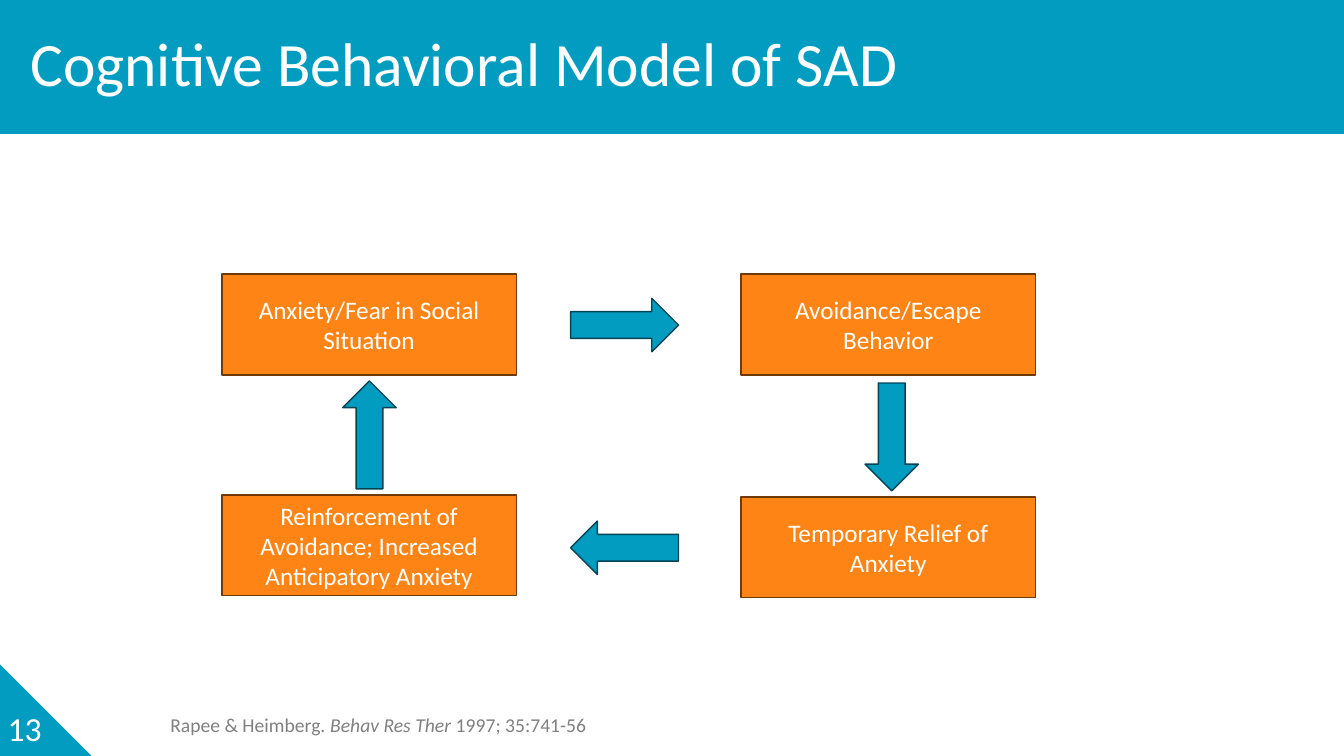
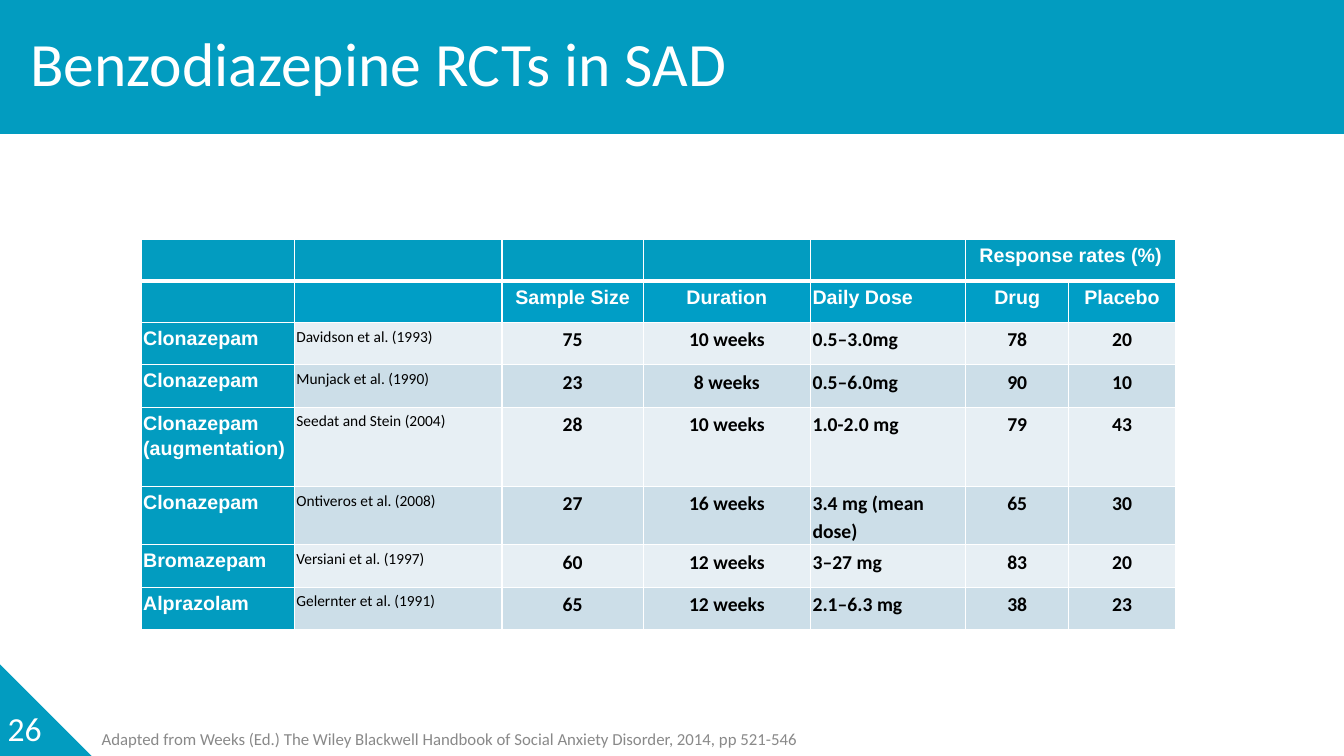
import pptx
import pptx.util
import pptx.dml.color
import pptx.enum.shapes
import pptx.enum.text
import pptx.oxml
import pptx.oxml.ns

Pt = pptx.util.Pt
SHAPE = pptx.enum.shapes.MSO_SHAPE
ANCHOR = pptx.enum.text.MSO_ANCHOR
ALIGN = pptx.enum.text.PP_ALIGN

PX = 9144  # 100 px to the inch
WIDE, HIGH = 1333, 750
BAND, CORNER = 133, 91
TEAL, HEAD, ORANGE, WHITE = "029CC0", "009EC6", "FE8415", "FFFFFF"
BROWN, NAVY, BLACK = "6F3A09", "014454", "000000"
STRIPES = ["E7EFF4", "CCDEE8"]

BOX = (292, 100)
STEPS = [
    ("Reinforcement of Avoidance; Increased Anticipatory Anxiety", 220, 491),
    ("Anxiety/Fear in Social Situation", 220, 272),
    ("Avoidance/Escape Behavior", 735, 272),
    ("Temporary Relief of Anxiety", 735, 493),
]
LONG, SHORT = 107, 53
ARROWS = [
    (SHAPE.RIGHT_ARROW, 566, 296, LONG, SHORT),
    (SHAPE.DOWN_ARROW, 858, 380, SHORT, LONG),
    (SHAPE.UP_ARROW, 340, 378, SHORT, LONG),
    (SHAPE.LEFT_ARROW, 566, 517, LONG, SHORT),
]
CITE = [("Rapee & Heimberg. ", False), ("Behav Res Ther ", True),
        ("1997; 35:741-56", False)]
SOURCE = [("Adapted from Weeks (Ed.) The Wiley Blackwell Handbook of Social "
           "Anxiety Disorder, 2014, pp 521-546", False)]

COLS = [152, 206, 140, 166, 154, 102, 106]
ROWS = [41, 41, 42, 42, 79, 42, 42, 42]
TRIALS = [
    ("", "", "", "", "", "Response rates (%)", ""),
    ("", "", "Sample Size", "Duration", "Daily Dose", "Drug", "Placebo"),
    ("Clonazepam", "Davidson et al. (1993)", "75", "10 weeks",
     "0.5–3.0mg", "78", "20"),
    ("Clonazepam", "Munjack et al. (1990)", "23", "8 weeks",
     "0.5–6.0mg", "90", "10"),
    ("Clonazepam (augmentation)", "Seedat and Stein (2004)", "28", "10 weeks",
     "1.0-2.0 mg", "79", "43"),
    ("Clonazepam", "Ontiveros et al. (2008)", "27", "16 weeks",
     "3.4 mg (mean dose)", "65", "30"),
    ("Bromazepam", "Versiani et al. (1997)", "60", "12 weeks",
     "3–27 mg", "83", "20"),
    ("Alprazolam", "Gelernter et al. (1991)", "65", "12 weeks",
     "2.1–6.3 mg", "38", "23"),
]
LEFT_COLS = (0, 1, 4)


def px(*nums):
    return [pptx.util.Emu(n * PX) for n in nums]


def rgb(code):
    return pptx.dml.color.RGBColor.from_string(code)


def style(run, size, color, face="Calibri", bold=False, italic=False):
    font = run.font
    font.size, font.name = Pt(size), face
    font.color.rgb = rgb(color)
    font.bold, font.italic = bold, italic


def inset(part, left, top, right, bottom):
    """Set the margins of a text frame or a table cell."""
    part.margin_left, part.margin_top, part.margin_right, part.margin_bottom = px(
        left, top, right, bottom)


def shape(slide, kind, at, fill, line=None):
    item = slide.shapes.add_shape(kind, *px(*at))
    item.shadow.inherit = False
    item.fill.solid()
    item.fill.fore_color.rgb = rgb(fill)
    if line:
        item.line.color.rgb = rgb(line)
        item.line.width = Pt(1)
    else:
        item.line.fill.background()
    return item


def write(frame, text, size, color, align=ALIGN.LEFT):
    para = frame.paragraphs[0]
    para.text = text
    para.alignment = align
    style(para.runs[0], size, color)
    return para


def textbox(slide, at, anchor):
    frame = slide.shapes.add_textbox(*px(*at)).text_frame
    frame.word_wrap = True
    frame.vertical_anchor = anchor
    return frame


def page(deck, title, number):
    """Add a slide with the title band and the numbered corner."""
    slide = deck.slides.add_slide(deck.slide_layouts[6])
    shape(slide, SHAPE.RECTANGLE, (0, 0, WIDE, BAND), TEAL)
    corner = shape(slide, SHAPE.RIGHT_TRIANGLE,
                   (0, HIGH - CORNER, CORNER, CORNER), TEAL).text_frame
    corner.word_wrap = False
    corner.vertical_anchor = ANCHOR.BOTTOM
    inset(corner, 0, 0, 2, 0)
    write(corner, number, 24, WHITE)
    frame = textbox(slide, (0, 0, 1101, BAND), ANCHOR.MIDDLE)
    inset(frame, 30, 10, 30, 10)
    write(frame, title, 44, WHITE).line_spacing = 0.9
    return slide


def footer(slide, at, anchor, parts, size, color):
    para = textbox(slide, at, anchor).paragraphs[0]
    for text, italic in parts:
        run = para.add_run()
        run.text = text
        style(run, size, color, italic=italic)


def borders(cell, row):
    """Draw white cell edges, thick under the first row."""
    props = cell._tc.get_or_add_tcPr()
    thick = {"T": row == 1, "B": row == 0}
    for spot, side in enumerate("LRTB"):
        width = Pt(3 if thick.get(side) else 1)
        props.insert(spot, pptx.oxml.parse_xml(
            f'<a:ln{side} {pptx.oxml.ns.nsdecls("a")} w="{width}"><a:solidFill>'
            f'<a:srgbClr val="{WHITE}"/></a:solidFill></a:ln{side}>'))


def fill_cell(cell, text, row, col):
    if row == 0 or col == 0:
        back = TEAL
    else:
        back = HEAD if row == 1 else STRIPES[row % 2]
    cell.fill.solid()
    cell.fill.fore_color.rgb = rgb(back)
    borders(cell, row)
    inset(cell, 2, 2, 2, 2)
    if not text:
        return
    para = cell.text_frame.paragraphs[0]
    para.text = text
    para.alignment = ALIGN.LEFT if col in LEFT_COLS else ALIGN.CENTER
    para.line_spacing = 1.15
    para.space_after = Pt(3)
    if row < 2 or col == 0:
        style(para.runs[0], 14, WHITE, "Arial", bold=True)
    elif col == 1:
        style(para.runs[0], 11, BLACK)
    else:
        style(para.runs[0], 14, BLACK, bold=True)


def model(deck):
    slide = page(deck, "Cognitive Behavioral Model of SAD", "13")
    for text, left, top in STEPS:
        frame = shape(slide, SHAPE.RECTANGLE, (left, top, *BOX),
                      ORANGE, BROWN).text_frame
        frame.word_wrap = True
        frame.vertical_anchor = ANCHOR.MIDDLE
        write(frame, text, 18, WHITE, ALIGN.CENTER)
    for kind, *at in ARROWS:
        shape(slide, kind, at, TEAL, NAVY)
    footer(slide, (159, 702, 708, 34), ANCHOR.TOP, CITE, 14, "808080")


def trials(deck):
    slide = page(deck, "Benzodiazepine RCTs in SAD", "26")
    footer(slide, (91, 686, 1021, 62), ANCHOR.BOTTOM, SOURCE, 12, "898989")
    table = slide.shapes.add_table(
        len(ROWS), len(COLS), *px(140, 238, sum(COLS), sum(ROWS))).table
    table.first_row = table.horz_banding = False
    for col, width in zip(table.columns, px(*COLS)):
        col.width = width
    for row, height in zip(table.rows, px(*ROWS)):
        row.height = height
    table.cell(0, 5).merge(table.cell(0, 6))
    for row, texts in enumerate(TRIALS):
        for col, text in enumerate(texts):
            fill_cell(table.cell(row, col), text, row, col)


def main():
    deck = pptx.Presentation()
    deck.slide_width, deck.slide_height = px(WIDE, HIGH)
    model(deck)
    trials(deck)
    deck.save("out.pptx")


if __name__ == "__main__":
    main()
